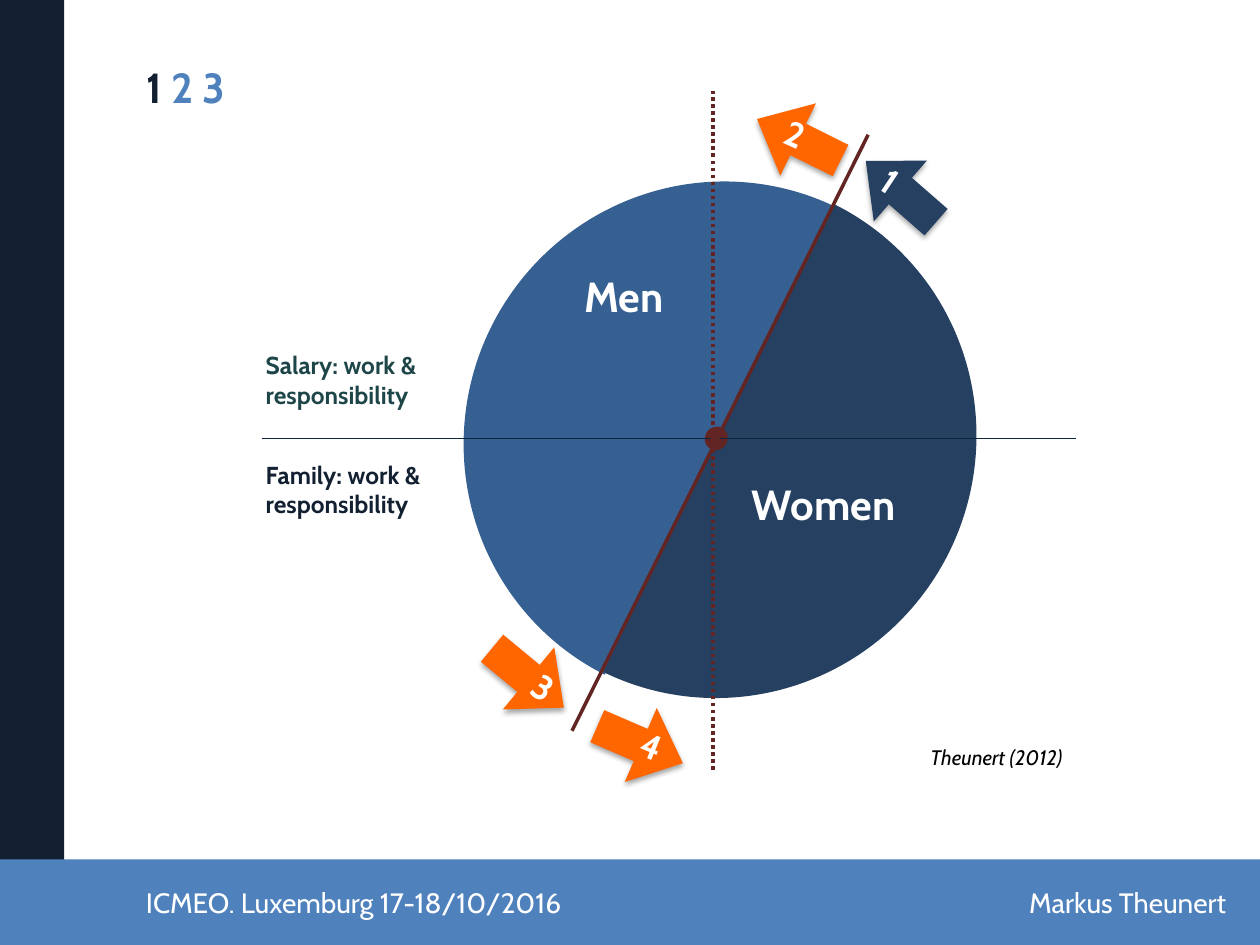
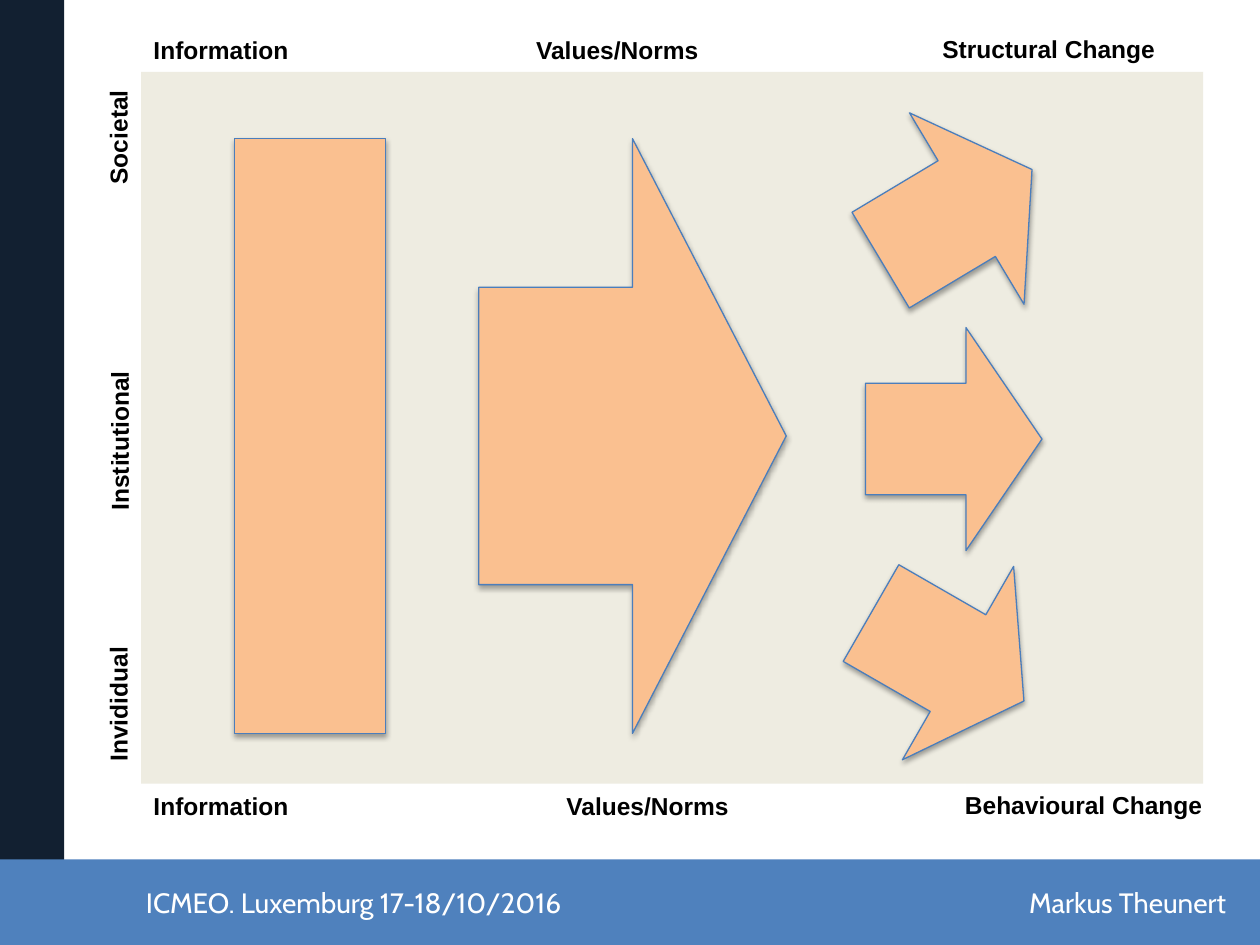
from dataclasses import dataclass

from lxml import etree
from pptx import Presentation
from pptx.dml.color import RGBColor
from pptx.enum.dml import MSO_LINE
from pptx.enum.shapes import MSO_CONNECTOR, MSO_SHAPE
from pptx.enum.text import MSO_ANCHOR, MSO_AUTO_SIZE, PP_ALIGN
from pptx.oxml.ns import qn
from pptx.util import Inches, Pt

RECT = MSO_SHAPE.RECTANGLE
OVAL = MSO_SHAPE.OVAL
BLOCK_ARC = MSO_SHAPE.BLOCK_ARC
LEFT_ARROW = MSO_SHAPE.LEFT_ARROW
RIGHT_ARROW = MSO_SHAPE.RIGHT_ARROW
STRAIGHT = MSO_CONNECTOR.STRAIGHT
DOTTED = MSO_LINE.ROUND_DOT
LEFT, CENTER, RIGHT = PP_ALIGN.LEFT, PP_ALIGN.CENTER, PP_ALIGN.RIGHT
TITLE_ONLY, BLANK = 5, 6


@dataclass(frozen=True)
class Theme:
    """Colours, fonts and type sizes of the deck."""

    navy: str = "122031"
    blue: str = "4F81BD"
    men: str = "376092"
    women: str = "254061"
    teal: str = "1E4649"
    axis: str = "0F243E"
    maroon: str = "632523"
    orange: str = "FF6600"
    peach: str = "FAC090"
    outline: str = "4B7EBC"
    cream: str = "EEECE1"
    white: str = "FFFFFF"
    black: str = "000000"
    brand_font: str = "Cabin"
    label_font: str = "Arial"
    heading: int = 24
    number: int = 20
    footer: int = 16
    label: int = 14
    source: int = 12


class Deck:
    """Holds the theme and the current slide and draws each kind of element."""

    def __init__(self, theme):
        self.theme = theme
        self.prs = Presentation()
        self.prs.slide_width, self.prs.slide_height = Inches(10), Inches(7.5)
        self.slide = None

    def new_slide(self, layout):
        self.slide = self.prs.slides.add_slide(self.prs.slide_layouts[layout])

    def share(self, *elements):
        master_tree = self.prs.slide_master.shapes.element
        for element in elements:
            master_tree.append(element.element)

    def shape(self, kind, box, fill, rotation=0, adjust=(), outline=None, shadow=False):
        item = self.slide.shapes.add_shape(kind, *map(Inches, box))
        item.rotation = rotation
        for index, value in enumerate(adjust):
            item.adjustments[index] = value
        item.fill.solid()
        item.fill.fore_color.rgb = RGBColor.from_string(fill)
        if outline:
            item.line.color.rgb = RGBColor.from_string(outline)
            item.line.width = Pt(0.75)
        else:
            item.line.fill.background()
        item.shadow.inherit = False
        if shadow:
            self.drop_shadow(item)
        return item

    def drop_shadow(self, item):
        effects = item.element.spPr.find(qn("a:effectLst"))
        outer = etree.SubElement(effects, qn("a:outerShdw"), blurRad=str(Pt(3.1)),
                                 dist=str(Pt(1.8)), dir="5400000", rotWithShape="0")
        color = etree.SubElement(outer, qn("a:srgbClr"), val=self.theme.black)
        etree.SubElement(color, qn("a:alpha"), val="35000")

    def line(self, start, end, color, width, dash=None):
        item = self.slide.shapes.add_connector(STRAIGHT, *map(Inches, start + end))
        item.line.color.rgb = RGBColor.from_string(color)
        item.line.width = Pt(width)
        if dash:
            item.line.dash_style = dash
        etree.SubElement(item.element.spPr, qn("a:effectLst"))

    def style(self, paragraph, size, color, font, bold, italic, align):
        paragraph.alignment = align
        paragraph.font.name = font
        paragraph.font.size = Pt(size)
        paragraph.font.bold = bold
        paragraph.font.italic = italic
        paragraph.font.color.rgb = RGBColor.from_string(color)

    def text(self, words, box, size, color, font=None, bold=True, italic=False,
             align=LEFT, rotation=0):
        item = self.slide.shapes.add_textbox(*map(Inches, box))
        item.rotation = rotation
        item.text_frame.word_wrap = True
        item.text_frame.text = words
        self.style(item.text_frame.paragraphs[0], size, color,
                   font or self.theme.brand_font, bold, italic, align)
        return item

    def title(self, parts, box):
        item = self.slide.shapes.title
        item.left, item.top, item.width, item.height = map(Inches, box)
        frame = item.text_frame
        frame.auto_size = MSO_AUTO_SIZE.NONE
        frame.vertical_anchor = MSO_ANCHOR.TOP
        paragraph = frame.paragraphs[0]
        self.style(paragraph, self.theme.heading, self.theme.navy,
                   self.theme.brand_font, True, False, LEFT)
        for words, color in parts:
            run = paragraph.add_run()
            run.text = words
            run.font.color.rgb = RGBColor.from_string(color)


def add_bands(deck):
    """Draw the side band and the footer and share them on the master."""
    t = deck.theme
    deck.share(
        deck.shape(RECT, (0, 0, 0.51, 7.5), t.navy),
        deck.shape(RECT, (0, 6.82, 10, 0.68), t.blue),
        deck.text("ICMEO. Luxemburg 17-18/10/2016", (1.06, 6.98, 4.08, 0.37),
                  t.footer, t.white, bold=False),
        deck.text("Markus Theunert", (8.07, 6.98, 1.93, 0.37),
                  t.footer, t.white, bold=False),
    )


def add_work_circle(deck):
    """Draw the circle of work shared between men and women."""
    t = deck.theme
    deck.shape(BLOCK_ARC, (3.66, 1.46, 4.14, 4.09), t.men, 296.7, (108, 0.01, 0.497))
    deck.shape(BLOCK_ARC, (3.63, 1.43, 4.14, 4.09), t.women, 116.1, (108, 0, 0.491))
    deck.text("Salary: work & responsibility", (2.01, 2.73, 1.89, 0.57), t.label, t.teal)
    deck.text("Men", (4.54, 2.1, 1.42, 0.51), t.heading, t.white)
    deck.text("Women", (5.87, 3.75, 1.97, 0.51), t.heading, t.white)
    deck.shape(OVAL, (5.59, 3.39, 0.19, 0.18), t.maroon, 304.2)
    deck.line((8.54, 3.48), (2.08, 3.48), t.axis, 0.5)
    deck.text("Family: work &\vresponsibility", (2.01, 3.6, 2.05, 0.57), t.label, t.navy)
    deck.line((5.66, 6.11), (5.66, 0.72), t.maroon, 2, DOTTED)
    deck.line((4.54, 5.8), (6.89, 1.07), t.maroon, 2)

    steps = (
        ("1", t.women, (6.78, 1.2), 41.1, (6.88, 1.34), 33.6),
        ("2", t.orange, (5.97, 0.79), 26.4, (6.12, 0.93), 24.3),
        ("4", t.orange, (4.71, 5.59), 203.4, (4.98, 5.78), 22.5),
        ("3", t.orange, (3.82, 5.06), 219.6, (4.11, 5.35), 32.8),
    )
    for number, color, arrow_at, arrow_turn, number_at, number_turn in steps:
        deck.shape(LEFT_ARROW, arrow_at + (0.74, 0.64), color, arrow_turn,
                   (0.435, 0.569), shadow=True)
        deck.text(number, number_at + (0.76, 0.44), t.number, t.white,
                  rotation=number_turn)

    deck.text("Theunert (2012)", (6.53, 5.86, 2, 0.5), t.source, t.black,
              bold=False, italic=True, align=RIGHT)
    deck.title((("1 ", t.navy), ("2 3", t.blue)), (1.06, 0.44, 8.82, 0.51))


def add_change_levels(deck):
    """Draw the path from information to change on three levels."""
    t = deck.theme
    levels = (("Societal", 0.14, 0.92), ("Institutional", 0.15, 3.33),
              ("Invididual", 0.14, 5.42))
    for level, left, top in levels:
        deck.text(level, (left, top, 1.6, 0.34), t.label, t.black, t.label_font,
                  align=CENTER, rotation=270)

    stages = (
        ("Structural Change", 7.38, 0.22, 2.18, LEFT),
        ("Information", 1.12, 0.23, 1.6, LEFT),
        ("Values/Norms", 4.1, 0.23, 1.6, CENTER),
        ("Behavioural Change", 7.56, 6.22, 2.2, LEFT),
        ("Information", 1.12, 6.23, 1.6, LEFT),
        ("Values/Norms", 4.34, 6.23, 1.6, CENTER),
    )
    for stage, left, top, width, align in stages:
        deck.text(stage, (left, top, width, 0.34), t.label, t.black, t.label_font,
                  align=align)

    deck.shape(RECT, (1.12, 0.57, 8.43, 5.65), t.cream)
    change = (1.4, 1.77)
    head = (0.5, 0.431)
    blocks = (
        (RIGHT_ARROW, (3.8, 1.1, 2.44, 4.72), 0, ()),
        (RIGHT_ARROW, (6.82, 4.33) + change, 29.9, head),
        (RIGHT_ARROW, (6.89, 0.82) + change, 329.1, head),
        (RIGHT_ARROW, (6.87, 2.6) + change, 0, head),
        (RECT, (1.86, 1.1, 1.2, 4.72), 0, ()),
    )
    for kind, box, turn, adjust in blocks:
        deck.shape(kind, box, t.peach, turn, adjust, t.outline, shadow=True)


def main():
    """Build both slides and save the deck."""
    deck = Deck(Theme())
    deck.new_slide(TITLE_ONLY)
    add_bands(deck)
    add_work_circle(deck)
    deck.new_slide(BLANK)
    add_change_levels(deck)
    deck.prs.save("out.pptx")


if __name__ == "__main__":
    main()
